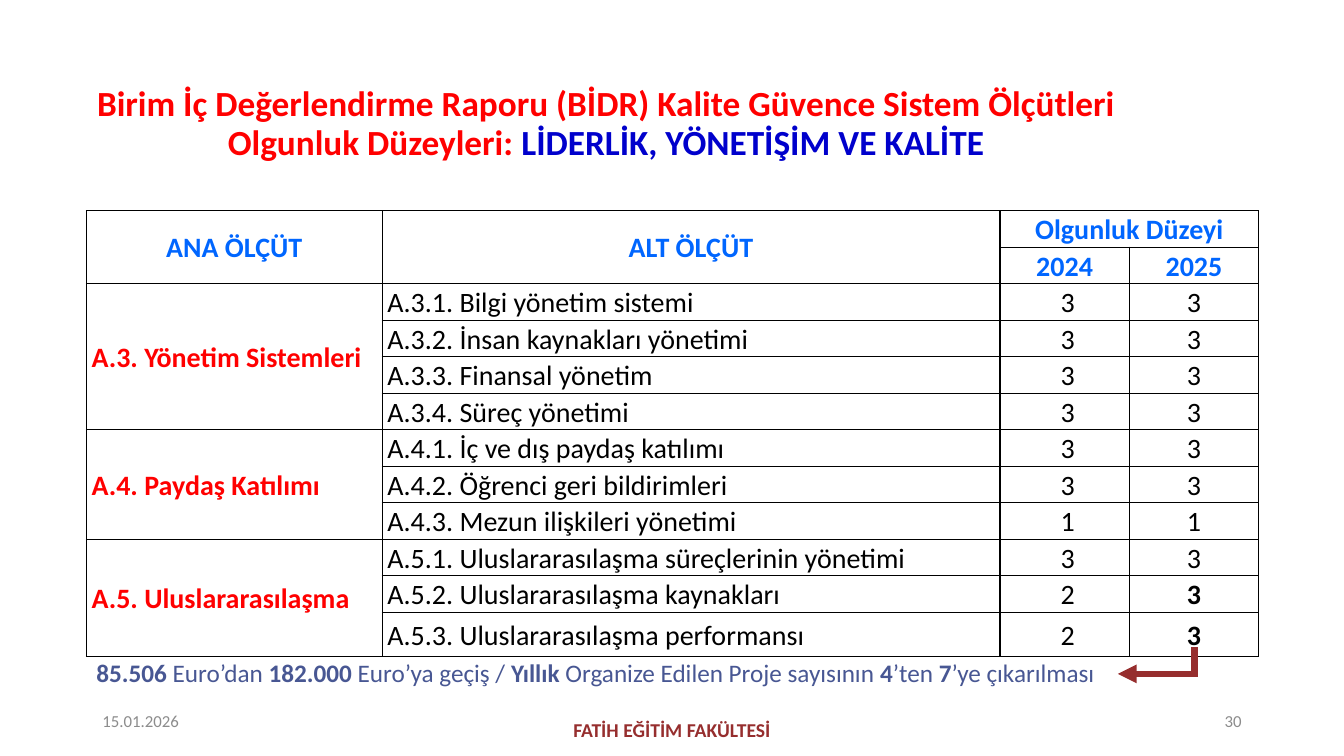
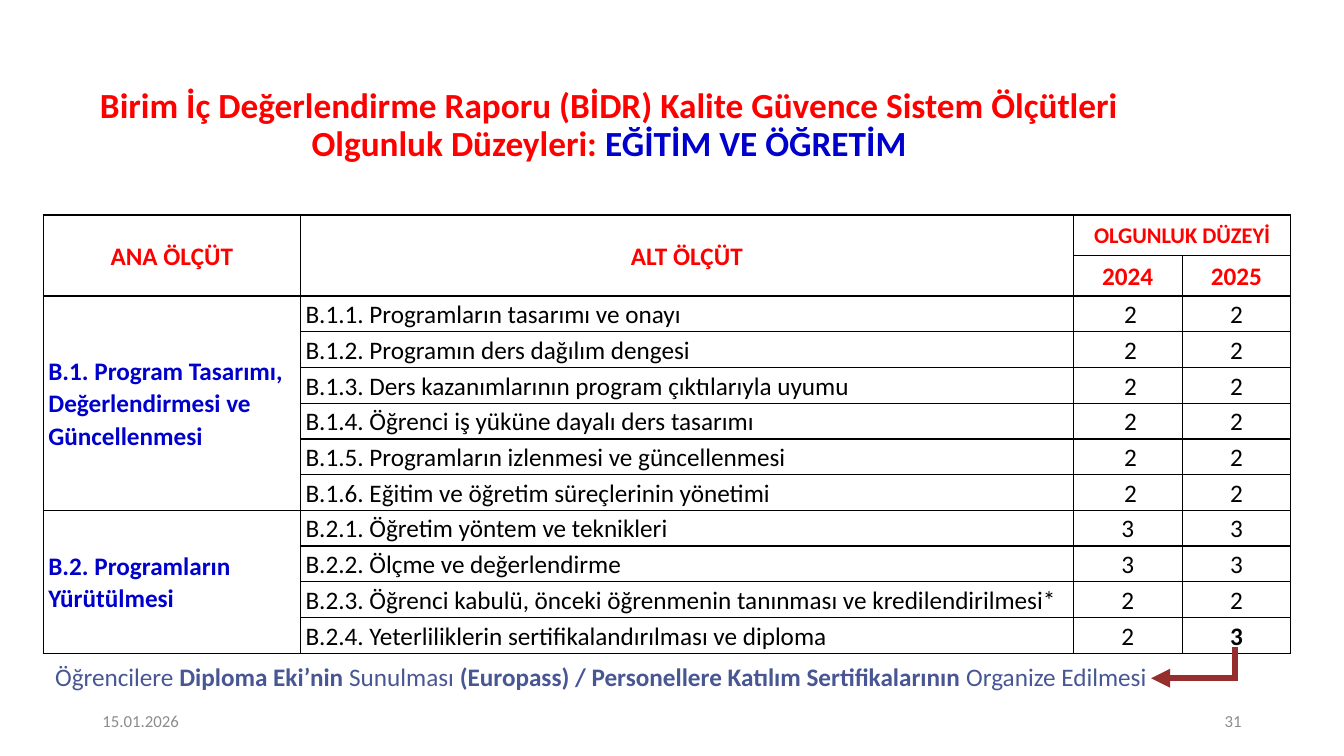
from lxml import etree
from pptx import Presentation
from pptx.dml.color import RGBColor
from pptx.enum.shapes import MSO_CONNECTOR
from pptx.enum.text import MSO_ANCHOR, MSO_AUTO_SIZE, PP_ALIGN
from pptx.oxml.ns import qn
from pptx.util import Cm, Pt

LEFT, CENTER, RIGHT, JUSTIFY = PP_ALIGN.LEFT, PP_ALIGN.CENTER, PP_ALIGN.RIGHT, PP_ALIGN.JUSTIFY
MIDDLE, TOP = MSO_ANCHOR.MIDDLE, MSO_ANCHOR.TOP
NO_AUTOFIT = MSO_AUTO_SIZE.NONE
STRAIGHT = MSO_CONNECTOR.STRAIGHT

FONT = "Calibri"
RED, BLUE, BRIGHT_BLUE = "FF0000", "0000CC", "0066FF"
MAROON, SLATE, GRAY, BLACK = "962E2E", "485793", "8C8C8C", "000000"
SLIDE_WIDTH, SLIDE_HEIGHT = 33.87, 19.05
SIDE_MARGIN, FOOTER_TOP, FOOTER_HEIGHT = 2.33, 17.65, 1.02
CELL_MARGIN = 0.13
FIRST_YEAR_COLUMN = 2
TITLE_START = ("Birim İç Değerlendirme Raporu (BİDR) Kalite Güvence Sistem Ölçütleri "
               "Olgunluk Düzeyleri: ")

LEADERSHIP = {
    "number": "30",
    "topic": "LİDERLİK, YÖNETİŞİM VE KALİTE",
    "title_box": (0.91, 2.16, 28.73, 1.96),
    "faculty": "FATİH EĞİTİM FAKÜLTESİ",
    "table": {
        "corner": (2.18, 5.31),
        "columns": [7.45, 15.57, 3.26, 3.26],
        "rows": [0.92] * 11 + [1.12],
        "level_heading": "Olgunluk Düzeyi",
        "size": 20, "level_size": 20,
        "heading_color": BRIGHT_BLUE, "main_color": RED, "main_align": JUSTIFY,
        "groups": [
            ("A.3. Yönetim Sistemleri", 0.16, [
                ("A.3.1. Bilgi yönetim sistemi", 3, 3),
                ("A.3.2. İnsan kaynakları yönetimi", 3, 3),
                ("A.3.3. Finansal yönetim", 3, 3),
                ("A.3.4. Süreç yönetimi", 3, 3)]),
            ("A.4. Paydaş Katılımı", 0.16, [
                ("A.4.1. İç ve dış paydaş katılımı", 3, 3),
                ("A.4.2. Öğrenci geri bildirimleri", 3, 3),
                ("A.4.3. Mezun ilişkileri yönetimi", 1, 1)]),
            ("A.5. Uluslararasılaşma", 0.16, [
                ("A.5.1. Uluslararasılaşma süreçlerinin yönetimi", 3, 3),
                ("A.5.2. Uluslararasılaşma kaynakları", 2, 3),
                ("A.5.3. Uluslararasılaşma performansı", 2, 3)]),
        ],
    },
    "note": "|85.506| Euro’dan |182.000| Euro’ya geçiş / |Yıllık| Organize Edilen Proje "
            "sayısının |4|’ten |7|’ye çıkarılması",
    "note_box": (2.18, 16.43, 30.3, 1.02),
    "arrow_box": (28.17, 16.31, 1.93, 0.67),
}

EDUCATION = {
    "number": "31",
    "topic": "EĞİTİM VE ÖĞRETİM",
    "title_box": (1.09, 2.29, 28.52, 1.78),
    "faculty": None,
    "table": {
        "corner": (1.09, 5.42),
        "columns": [6.48, 19.48, 2.74, 2.74],
        "rows": [1.02] * 2 + [0.9] * 10,
        "level_heading": "OLGUNLUK DÜZEYİ",
        "size": 18, "level_size": 16,
        "heading_color": RED, "main_color": BLUE, "main_align": LEFT,
        "groups": [
            ("B.1. Program Tasarımı, Değerlendirmesi ve Güncellenmesi", 0.14, [
                ("B.1.1. Programların tasarımı ve onayı", 2, 2),
                ("B.1.2. Programın ders dağılım dengesi", 2, 2),
                ("B.1.3. Ders kazanımlarının program çıktılarıyla uyumu", 2, 2),
                ("B.1.4. Öğrenci iş yüküne dayalı ders tasarımı", 2, 2),
                ("B.1.5. Programların izlenmesi ve güncellenmesi", 2, 2),
                ("B.1.6. Eğitim ve öğretim süreçlerinin yönetimi", 2, 2)]),
            ("B.2. Programların Yürütülmesi", 0, [
                ("B.2.1. Öğretim yöntem ve teknikleri", 3, 3),
                ("B.2.2. Ölçme ve değerlendirme", 3, 3),
                ("B.2.3. Öğrenci kabulü, önceki öğrenmenin tanınması ve kredilendirilmesi*", 2, 2),
                ("B.2.4. Yeterliliklerin sertifikalandırılması ve diploma", 2, 3)]),
        ],
    },
    "note": "Öğrencilere| Diploma Eki’nin |Sunulması |(Europass) / Personellere Katılım "
            "Sertifikalarının |Organize Edilmesi",
    "note_box": (1.14, 16.54, 28.52, 1.02),
    "arrow_box": (29.01, 16.31, 2.11, 0.78),
}


def rgb(value):
    return RGBColor.from_string(value)


def apply(target, values):
    for name, value in values.items():
        setattr(target, name, value)


def write(paragraph, runs, size, align=LEFT, spacing=1.0):
    apply(paragraph, {"alignment": align, "line_spacing": spacing})
    for text, color, bold in runs:
        run = paragraph.add_run()
        run.text = text
        apply(run.font, {"name": FONT, "size": Pt(size), "bold": bold})
        run.font.color.rgb = rgb(color)


def add_text(slide, box, runs, size, align=LEFT, anchor=MIDDLE):
    shape = slide.shapes.add_textbox(*map(Cm, box))
    apply(shape.text_frame, {"word_wrap": True, "vertical_anchor": anchor})
    write(shape.text_frame.paragraphs[0], runs, size, align)


def add_title(slide, box, topic):
    title = slide.shapes.title
    apply(title, dict(zip(("left", "top", "width", "height"), map(Cm, box))))
    apply(title.text_frame, {"word_wrap": True, "auto_size": NO_AUTOFIT, "vertical_anchor": MIDDLE})
    runs = [(TITLE_START, RED, True), (topic, BLUE, True)]
    write(title.text_frame.paragraphs[0], runs, 25.2, CENTER, 0.9)


def add_footer(slide, number, faculty):
    width = 7.62
    add_text(slide, (SIDE_MARGIN, FOOTER_TOP, width, FOOTER_HEIGHT),
             [("15.01.2026", GRAY, False)], 12)
    add_text(slide, (SLIDE_WIDTH - SIDE_MARGIN - width, FOOTER_TOP, width, FOOTER_HEIGHT),
             [(number, GRAY, False)], 12, RIGHT)
    if faculty:
        width = 11.43
        add_text(slide, ((SLIDE_WIDTH - width) / 2, 17.88, width, FOOTER_HEIGHT),
                 [(faculty, MAROON, True)], 14, CENTER)


def format_cell(cell):
    apply(cell, {"margin_left": Cm(CELL_MARGIN), "margin_right": Cm(CELL_MARGIN),
                 "margin_top": 0, "margin_bottom": 0, "vertical_anchor": MIDDLE})
    cell.fill.background()
    properties = cell._tc.get_or_add_tcPr()
    for position, side in enumerate(("a:lnL", "a:lnR", "a:lnT", "a:lnB")):
        border = etree.Element(qn(side), w=str(Pt(1)))
        fill = etree.SubElement(border, qn("a:solidFill"))
        etree.SubElement(fill, qn("a:srgbClr"), val=BLACK)
        properties.insert(position, border)


def add_criteria_table(slide, data):
    columns, rows, size = data["columns"], data["rows"], data["size"]
    box = (*data["corner"], sum(columns), sum(rows))
    table = slide.shapes.add_table(len(rows), len(columns), *map(Cm, box)).table
    apply(table, {"first_row": False, "horz_banding": False})
    for column, width in zip(table.columns, columns):
        column.width = Cm(width)
    for row, height in zip(table.rows, rows):
        row.height = Cm(height)
    for cell in table.iter_cells():
        format_cell(cell)

    def fill_cell(row, column, text, color, bold, align=CENTER, text_size=size, last=None):
        cell = table.cell(row, column)
        if last:
            cell.merge(table.cell(*last))
        write(cell.text_frame.paragraphs[0], [(text, color, bold)], text_size, align, 1.07)
        return cell

    heading = data["heading_color"]
    fill_cell(0, 0, "ANA ÖLÇÜT", heading, True, last=(1, 0))
    fill_cell(0, 1, "ALT ÖLÇÜT", heading, True, last=(1, 1))
    fill_cell(0, 2, data["level_heading"], heading, True, text_size=data["level_size"], last=(0, 3))
    for column, year in enumerate(("2024", "2025"), FIRST_YEAR_COLUMN):
        fill_cell(1, column, year, heading, True)

    row = 2
    for main, indent, criteria in data["groups"]:
        fill_cell(row, 0, main, data["main_color"], True, data["main_align"],
                  last=(row + len(criteria) - 1, 0))
        for criterion, before, after in criteria:
            fill_cell(row, 1, criterion, BLACK, False, JUSTIFY)
            cell = fill_cell(row, FIRST_YEAR_COLUMN, str(before), BLACK, False)
            cell.margin_left = Cm(CELL_MARGIN + indent)
            fill_cell(row, FIRST_YEAR_COLUMN + 1, str(after), BLACK, after > before)
            row += 1


def add_note(slide, box, note):
    runs = [(text, SLATE, index % 2 == 1) for index, text in enumerate(note.split("|")) if text]
    add_text(slide, box, runs, 18, anchor=TOP)


def add_line(slide, start, end, arrow=False):
    connector = slide.shapes.add_connector(STRAIGHT, *map(Cm, (*start, *end)))
    connector.line.width = Pt(4.5)
    connector.line.color.rgb = rgb(MAROON)
    if arrow:
        etree.SubElement(connector.line._get_or_add_ln(), qn("a:tailEnd"), type="triangle")
    etree.SubElement(connector._element.spPr, qn("a:effectLst"))


def add_elbow_arrow(slide, box):
    left, top, width, height = box
    right, bottom = left + width, top + height
    half_stroke = 0.08
    add_line(slide, (right + half_stroke, bottom), (left, bottom), arrow=True)
    add_line(slide, (right, top), (right, bottom))


def add_criteria_slide(presentation, data):
    slide = presentation.slides.add_slide(presentation.slide_layouts.get_by_name("Title Only"))
    add_title(slide, data["title_box"], data["topic"])
    add_footer(slide, data["number"], data["faculty"])
    add_criteria_table(slide, data["table"])
    add_note(slide, data["note_box"], data["note"])
    add_elbow_arrow(slide, data["arrow_box"])


def main():
    presentation = Presentation()
    apply(presentation, {"slide_width": Cm(SLIDE_WIDTH), "slide_height": Cm(SLIDE_HEIGHT)})
    for data in (LEADERSHIP, EDUCATION):
        add_criteria_slide(presentation, data)
    presentation.save("out.pptx")


if __name__ == "__main__":
    main()
